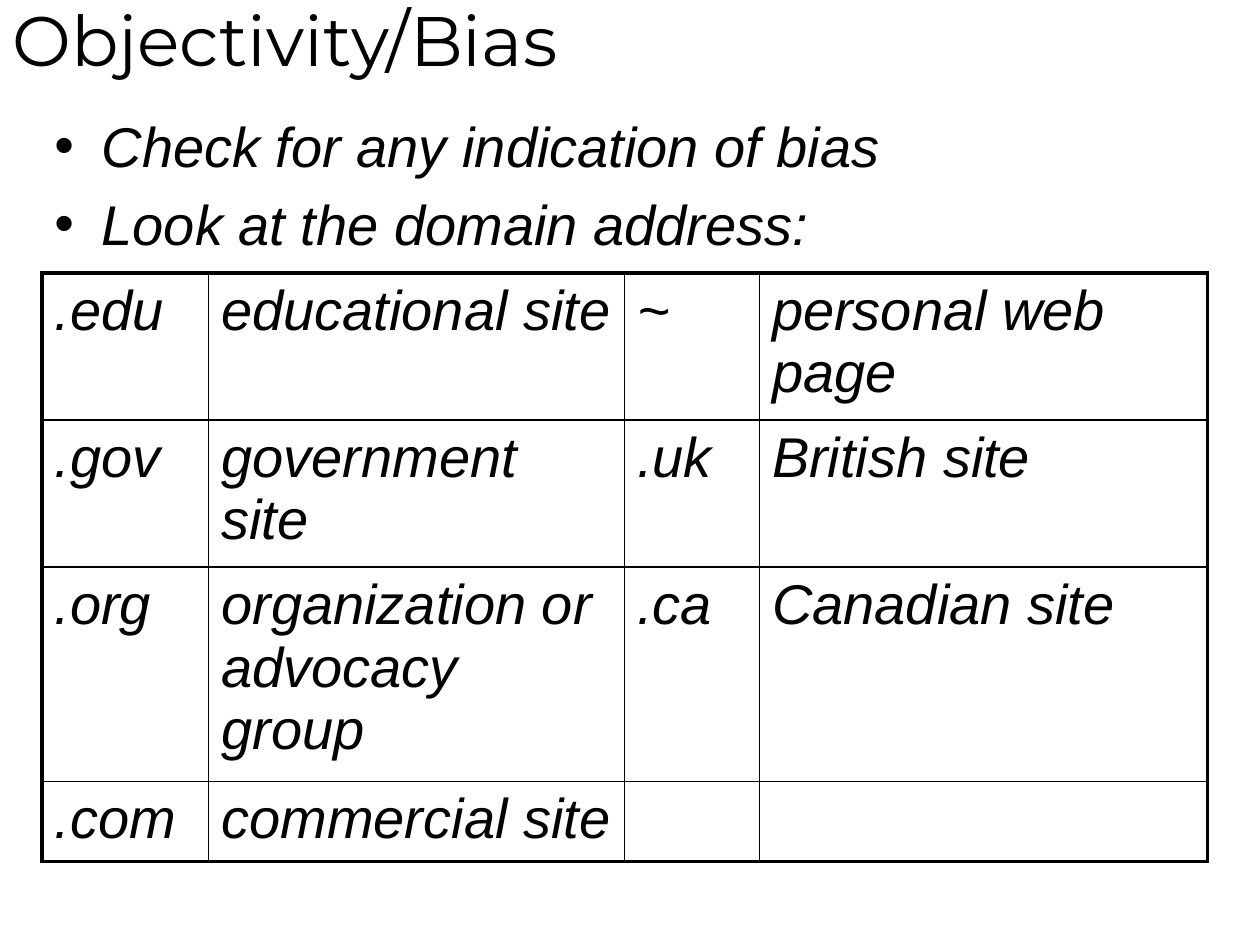
from dataclasses import dataclass

from lxml import etree
from pptx import Presentation
from pptx.dml.color import RGBColor
from pptx.enum import text as tx
from pptx.oxml import ns
from pptx.util import Pt

BLACK = RGBColor(0, 0, 0)


@dataclass(frozen=True)
class Box:
    left: float
    top: float
    width: float
    height: float


@dataclass(frozen=True)
class Style:
    font: str
    size: float
    slant: bool


HEAD = Style("Montserrat", 40, False)
BODY = Style("Arial", 32, True)

POINTS = ["Check for any indication of bias", "Look at the domain address:"]
GRID = Box(24, 156, 666, 336)
COLS = [95.3, 237.7, 77, 256]
ROWS = [60, 54, 83, 45]
SITES = [
    [".edu", "educational site", "~", "personal web page"],
    [".gov", "government site", ".uk", "British site"],
    [".org", "organization or advocacy group", ".ca", "Canadian site"],
    [".com", "commercial site", "", ""],
]


def add_run(para, words: str, style: Style) -> None:
    run = para.add_run()
    run.text = words
    run.font.name = style.font
    run.font.size = Pt(style.size)
    run.font.italic = style.slant
    run.font.color.rgb = BLACK


def add_text(slide, box: Box, anchor):
    shape = slide.shapes.add_textbox(
        Pt(box.left), Pt(box.top), Pt(box.width), Pt(box.height))
    frame = shape.text_frame
    frame.word_wrap = True
    frame.vertical_anchor = anchor
    return frame


def add_title(slide) -> None:
    frame = add_text(slide, Box(0, 0, 720, 44), tx.MSO_ANCHOR.MIDDLE)
    add_run(frame.paragraphs[0], "Objectivity/Bias", HEAD)


def add_points(slide) -> None:
    frame = add_text(slide, Box(24, 60, 648, 84), tx.MSO_ANCHOR.TOP)
    for i, words in enumerate(POINTS):
        para = frame.add_paragraph() if i else frame.paragraphs[0]
        if i:
            para.space_before = Pt(6.4)
        props = para._p.get_or_add_pPr()
        props.set("marL", str(Pt(27)))
        props.set("indent", str(Pt(-27)))
        etree.SubElement(props, ns.qn("a:buFont"), typeface="Arial")
        etree.SubElement(props, ns.qn("a:buChar"), char="•")
        add_run(para, words, BODY)


def set_edges(cell, row: int, col: int) -> None:
    outer = {
        "L": col == 0,
        "R": col == len(COLS) - 1,
        "T": row == 0,
        "B": row == len(ROWS) - 1,
    }
    props = cell._tc.get_or_add_tcPr()
    for i, (side, thick) in enumerate(outer.items()):
        line = etree.Element(ns.qn(f"a:ln{side}"), w=str(Pt(2.25 if thick else 1)))
        fill = etree.SubElement(line, ns.qn("a:solidFill"))
        etree.SubElement(fill, ns.qn("a:srgbClr"), val=str(BLACK))
        props.insert(i, line)


def add_sites(slide) -> None:
    shape = slide.shapes.add_table(
        len(ROWS), len(COLS), Pt(GRID.left), Pt(GRID.top),
        Pt(GRID.width), Pt(GRID.height))
    table = shape.table
    table.first_row = False
    table.horz_banding = False
    for col, width in zip(table.columns, COLS):
        col.width = Pt(width)
    for row, height in zip(table.rows, ROWS):
        row.height = Pt(height)
    shape.height = Pt(GRID.height)
    for r, line in enumerate(SITES):
        for c, words in enumerate(line):
            cell = table.cell(r, c)
            cell.fill.background()
            set_edges(cell, r, c)
            if words:
                add_run(cell.text_frame.paragraphs[0], words, BODY)


def main() -> None:
    deck = Presentation()
    deck.slide_width, deck.slide_height = Pt(720), Pt(540)
    slide = deck.slides.add_slide(deck.slide_layouts[6])
    add_title(slide)
    add_points(slide)
    add_sites(slide)
    deck.save("out.pptx")


if __name__ == "__main__":
    main()
